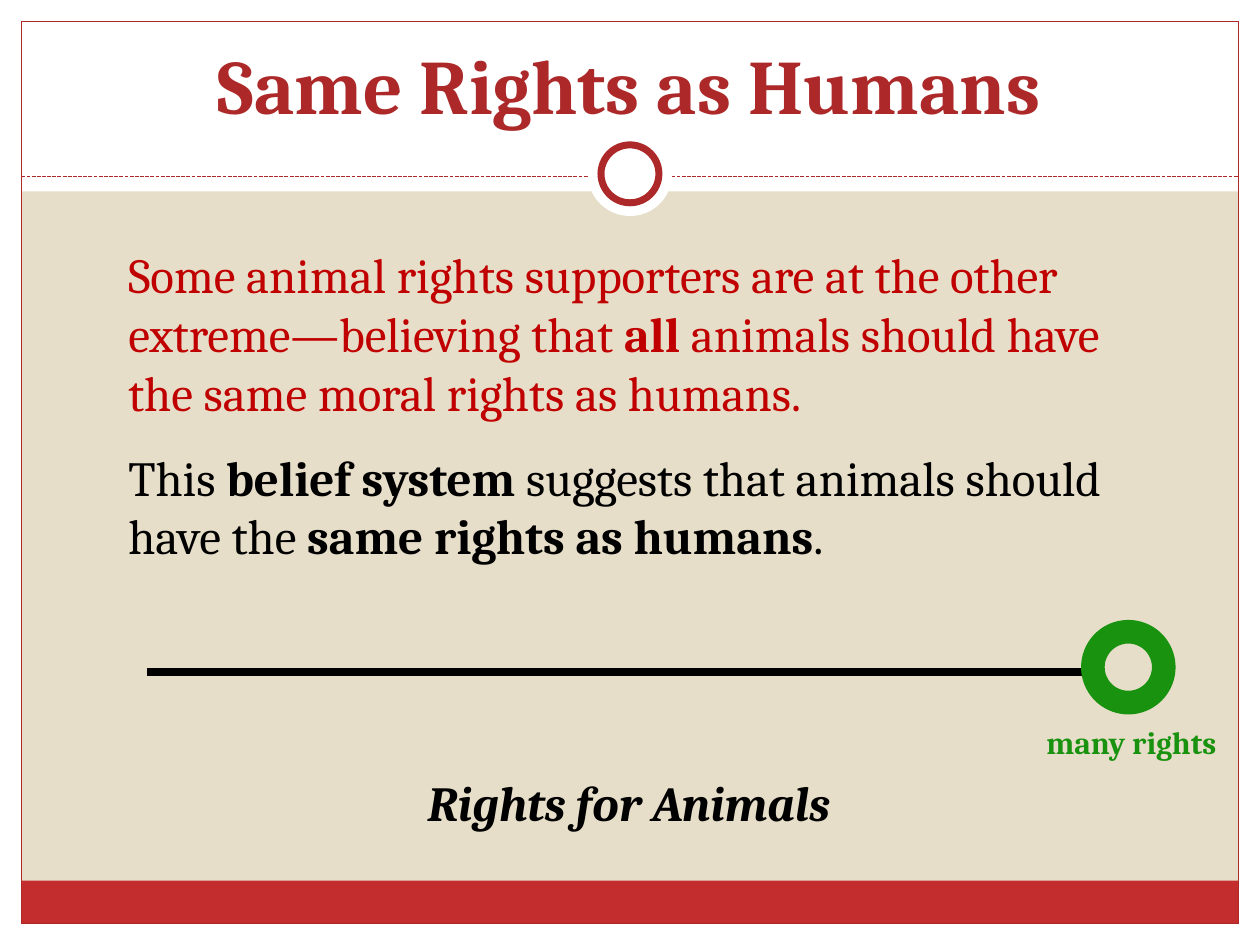
from lxml import etree
from pptx import Presentation, util as u
from pptx.dml.color import RGBColor
from pptx.enum import dml, shapes, text
from pptx.oxml.ns import qn

W, H, EDGE = 10, 7.5, 0.17
FONT = "Cambria"
HUES = {"sand": "E7DEC9", "white": "FFFFFF", "band": "C32D2E", "trim": "AC2829",
        "red": "C00000", "black": "000000", "green": "199210"}
KIND = shapes.MSO_SHAPE


def hue(name):
    return RGBColor.from_string(HUES[name])


def add_form(slide, kind, box, fill=None, line=None, width=0.75):
    form = slide.shapes.add_shape(kind, *map(u.Inches, box))
    form.shadow.inherit = False
    if fill:
        form.fill.solid()
        form.fill.fore_color.rgb = hue(fill)
    else:
        form.fill.background()
    if line:
        form.line.color.rgb = hue(line)
        form.line.width = u.Pt(width)
    else:
        form.line.fill.background()
    return form


def add_line(slide, x1, x2, y, color, width, dash=None):
    line = slide.shapes.add_connector(
        shapes.MSO_CONNECTOR.STRAIGHT, *map(u.Inches, (x1, y, x2, y)))
    line.line.color.rgb = hue(color)
    line.line.width = u.Pt(width)
    if dash:
        line.line.dash_style = dash
    etree.SubElement(line._element.spPr, qn("a:effectLst"))


def add_text(slide, words, box, size=28, color="black", bold=False,
             italic=False, align="LEFT", anchor="TOP"):
    """Place a text box; parts between ** marks are bold."""
    frame = slide.shapes.add_textbox(*map(u.Inches, box)).text_frame
    frame.word_wrap = True
    frame.vertical_anchor = text.MSO_ANCHOR[anchor]
    para = frame.paragraphs[0]
    para.alignment = text.PP_ALIGN[align]
    for i, part in enumerate(words.split("**")):
        run = para.add_run()
        run.text = part
        font = run.font
        font.name, font.size = FONT, u.Pt(size)
        font.bold, font.italic = bold or i % 2 == 1, italic
        font.color.rgb = hue(color)


def add_frame(slide, x, y, w, h):
    # White margins and header
    head = 1.52
    for box in ((x, y + h - EDGE, w, EDGE), (x, y, w, head),
                (x, y, EDGE, h), (x + w - EDGE, y, EDGE, h)):
        add_form(slide, KIND.RECTANGLE, box, fill="white")
    # Footer band and border
    left, wide, foot = x + EDGE, w - 2 * EDGE, 0.34
    add_form(slide, KIND.RECTANGLE,
             (left, y + h - EDGE - foot, wide, foot), fill="band")
    add_form(slide, KIND.RECTANGLE,
             (left, y + EDGE, wide, h - 2 * EDGE), line="trim")
    # Dashed rule with a ring at its middle
    add_line(slide, left, left + wide, y + 1.4, "trim", 0.75,
             dml.MSO_LINE.SQUARE_DOT)
    for size, line in ((0.67, None), (0.46, "trim")):
        add_form(slide, KIND.OVAL,
                 (x + (w - size) / 2, y + 1.38 - size / 2, size, size),
                 fill="white", line=line, width=4)


def add_body(slide, x, y, w):
    add_text(slide, "Some animal rights supporters are at the other "
             "extreme—believing that **all** animals should have the same "
             "moral rights as humans.", (x, y, w, 1.51), color="red")
    add_text(slide, "This **belief system** suggests that animals should "
             "have the **same rights as humans**.",
             (x, y + 1.61, w - 0.16, 1.04))


def add_scale(slide, x, y, w):
    add_line(slide, x, x + w, y, "black", 4.5)
    size = 0.75
    add_form(slide, KIND.DONUT, (x + w - 0.09, y - 0.41, size, size), fill="green")
    add_text(slide, "Rights for Animals", (x + 1.75, y + 0.75, 4.14, 0.57),
             bold=True, italic=True, align="CENTER")
    add_text(slide, "many rights", (x + w - 0.67, y + 0.36, 1.96, 0.4),
             size=18, color="green", bold=True, align="CENTER")


def main():
    deck = Presentation()
    deck.slide_width, deck.slide_height = u.Inches(W), u.Inches(H)
    slide = deck.slides.add_slide(deck.slide_layouts[6])
    slide.background.fill.solid()
    slide.background.fill.fore_color.rgb = hue("sand")
    add_frame(slide, 0, 0, W, H)
    add_text(slide, "Same Rights as Humans", (0.33, 0.25, 9.33, 0.83), size=44,
             color="trim", bold=True, align="CENTER", anchor="BOTTOM")
    add_body(slide, 0.92, 1.89, 8.25)
    add_scale(slide, 1.17, 5.33, 7.5)
    deck.save("out.pptx")


if __name__ == "__main__":
    main()
